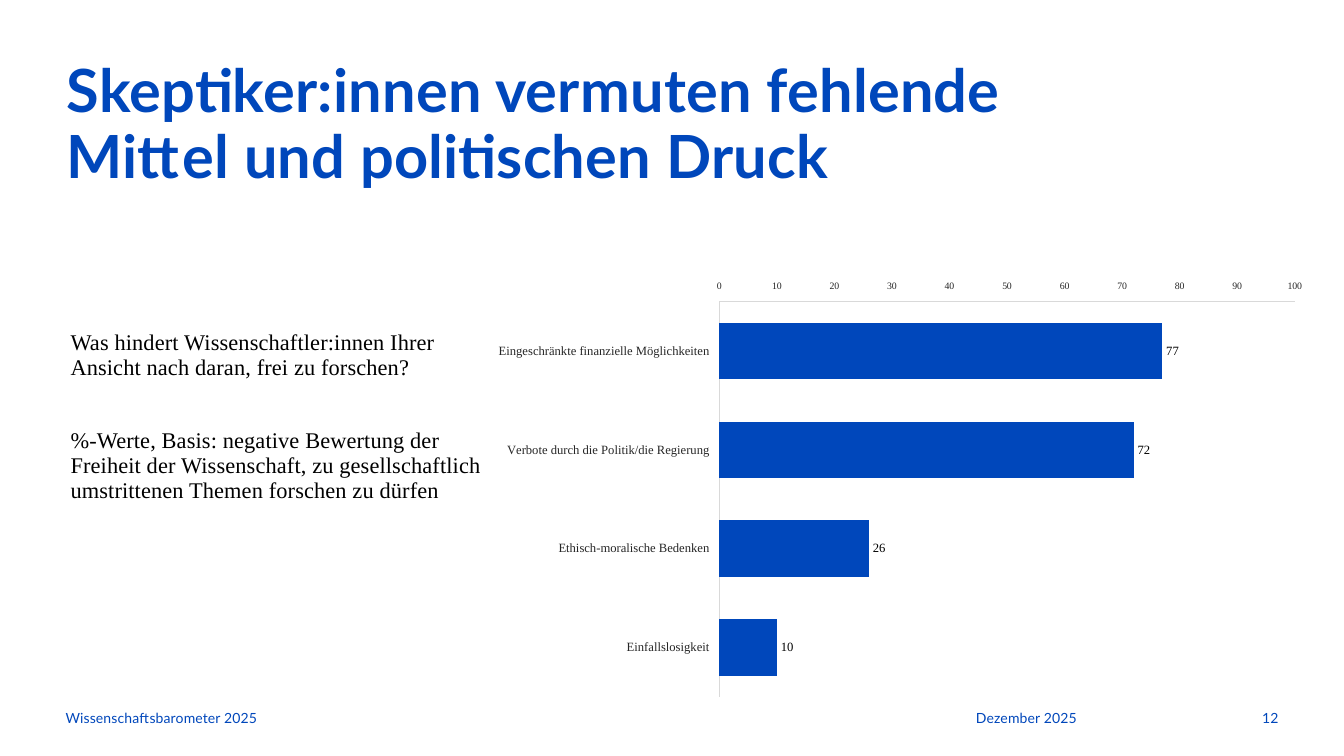
from dataclasses import dataclass

from lxml.etree import SubElement
from pptx import Presentation
from pptx.chart.data import CategoryChartData
from pptx.dml.color import RGBColor
from pptx.enum.chart import (XL_CHART_TYPE, XL_LABEL_POSITION, XL_TICK_LABEL_POSITION,
                             XL_TICK_MARK)
from pptx.enum.text import MSO_ANCHOR, PP_ALIGN
from pptx.oxml import parse_xml
from pptx.oxml.ns import nsdecls, qn
from pptx.util import Inches, Pt

SLIDE_WIDTH, SLIDE_HEIGHT = Inches(13.33), Inches(7.5)
FOOTER_TOP, FOOTER_HEIGHT = 93.87, 2.67


@dataclass(frozen=True)
class Theme:
    """Colours, fonts and type sizes of the slide."""
    blue: RGBColor = RGBColor(0x00, 0x47, 0xBB)
    black: RGBColor = RGBColor(0, 0, 0)
    axis_text: RGBColor = RGBColor(0x26, 0x26, 0x26)
    axis_line: RGBColor = RGBColor(0xD9, 0xD9, 0xD9)
    sans: str = "Lato"
    serif: str = "Times New Roman"
    title_size: float = 42.5
    question_size: float = 16
    footer_size: float = 10
    label_size: float = 9
    scale_size: float = 7


THEME = Theme()


def area(left, top, width, height):
    """Turn percentages of the slide into left, top, width and height."""
    return (round(SLIDE_WIDTH * left / 100), round(SLIDE_HEIGHT * top / 100),
            round(SLIDE_WIDTH * width / 100), round(SLIDE_HEIGHT * height / 100))


def style_font(font, size, color, name, bold=False):
    """Apply size, colour, typeface and weight to a font."""
    font.size, font.name, font.bold = Pt(size), name, bold
    font.color.rgb = color


def add_text(slide, place, paragraphs, size, color, name, bold=False, tracking=10,
             line_spacing=1.0, gap=0, align=PP_ALIGN.LEFT):
    """Add a borderless text box with evenly spaced paragraphs."""
    frame = slide.shapes.add_textbox(*place).text_frame
    frame.word_wrap = True
    frame.vertical_anchor = MSO_ANCHOR.TOP
    frame.margin_left = frame.margin_top = frame.margin_right = frame.margin_bottom = 0
    frame.text = "\n".join(paragraphs)
    for index, paragraph in enumerate(frame.paragraphs):
        paragraph.alignment = align
        paragraph.line_spacing = line_spacing
        if index:
            paragraph.space_before = Pt(gap)
        for run in paragraph.runs:
            style_font(run.font, size, color, name, bold)
            run.font._element.set("spc", str(tracking))


def add_footer(slide, left, width, wording, align=PP_ALIGN.LEFT):
    """Add one entry of the footer line."""
    add_text(slide, area(left, FOOTER_TOP, width, FOOTER_HEIGHT), [wording],
             THEME.footer_size, THEME.blue, THEME.sans, align=align)


def style_axis(axis, size):
    """Give an axis its thin line, low labels and no ticks or gridlines."""
    axis.has_major_gridlines = False
    axis.major_tick_mark = axis.minor_tick_mark = XL_TICK_MARK.NONE
    axis.tick_label_position = XL_TICK_LABEL_POSITION.LOW
    axis.format.line.color.rgb = THEME.axis_line
    axis.format.line.width = Pt(0.75)
    style_font(axis.tick_labels.font, size, THEME.axis_text, THEME.serif)


def place_plot(chart, x, y, w, h):
    """Fix the inner plot area as shares of the chart frame."""
    plot_area = chart._chartSpace.chart.plotArea
    for previous in plot_area.findall(qn("c:layout")):
        plot_area.remove(previous)
    layout = parse_xml(f"<c:layout {nsdecls('c')}><c:manualLayout/></c:layout>")
    settings = {"layoutTarget": "inner", "xMode": "edge", "yMode": "edge",
                "x": x, "y": y, "w": w, "h": h}
    for tag, value in settings.items():
        SubElement(layout[0], qn(f"c:{tag}")).set("val", str(value))
    plot_area.insert(0, layout)


def add_bar_chart(slide, place, answers):
    """Add the bar chart of answers with the scale on top."""
    chart_data = CategoryChartData(number_format="#,##0")
    chart_data.categories = list(answers)
    chart_data.add_series("Series 1", list(answers.values()))
    chart = slide.shapes.add_chart(XL_CHART_TYPE.BAR_CLUSTERED, *place, chart_data).chart
    chart.has_legend = chart.has_title = False
    style_font(chart.font, THEME.scale_size, THEME.axis_text, THEME.serif)

    style_axis(chart.category_axis, THEME.label_size)
    chart.category_axis.reverse_order = True
    scale = chart.value_axis
    style_axis(scale, THEME.scale_size)
    scale.minimum_scale, scale.maximum_scale, scale.major_unit = 0, 100, 10

    plot = chart.plots[0]
    plot.gap_width = 75
    plot.vary_by_categories = False
    bars = plot.series[0]
    bars.format.fill.solid()
    bars.format.fill.fore_color.rgb = THEME.blue
    labels = bars.data_labels
    labels.show_value = True
    labels.position = XL_LABEL_POSITION.OUTSIDE_END
    labels.number_format, labels.number_format_is_linked = "#,##0", False
    style_font(labels.font, THEME.label_size, THEME.black, THEME.serif)
    place_plot(chart, 0.284, 0.187, 0.666, 0.812)


def main():
    """Build the slide and save it."""
    presentation = Presentation()
    presentation.slide_width, presentation.slide_height = SLIDE_WIDTH, SLIDE_HEIGHT
    slide = presentation.slides.add_slide(presentation.slide_layouts[6])

    add_text(slide, area(4.95, 7.87, 78.1, 18.4),
             ["Skeptiker:innen vermuten fehlende Mittel und politischen Druck"],
             THEME.title_size, THEME.blue, THEME.sans, bold=True, tracking=20,
             line_spacing=0.93)
    add_footer(slide, 72.62, 11.78, "Dezember 2025")
    add_footer(slide, 4.88, 33.76, "Wissenschaftsbarometer 2025")
    add_footer(slide, 89.2, 5.93, "12", PP_ALIGN.RIGHT)
    add_text(slide, area(5.25, 43.73, 30.91, 43.87),
             ["Was hindert Wissenschaftler:innen Ihrer Ansicht nach daran, frei zu forschen?",
              "%-Werte, Basis: negative Bewertung der Freiheit der Wissenschaft, "
              "zu gesellschaftlich umstrittenen Themen forschen zu dürfen"],
             THEME.question_size, THEME.black, THEME.serif, line_spacing=0.92, gap=35)
    add_bar_chart(slide, area(35.26, 27.87, 64.29, 64.4), {
        "Eingeschränkte finanzielle Möglichkeiten": 77,
        "Verbote durch die Politik/die Regierung": 72,
        "Ethisch-moralische Bedenken": 26,
        "Einfallslosigkeit": 10,
    })
    presentation.save("out.pptx")


if __name__ == "__main__":
    main()
